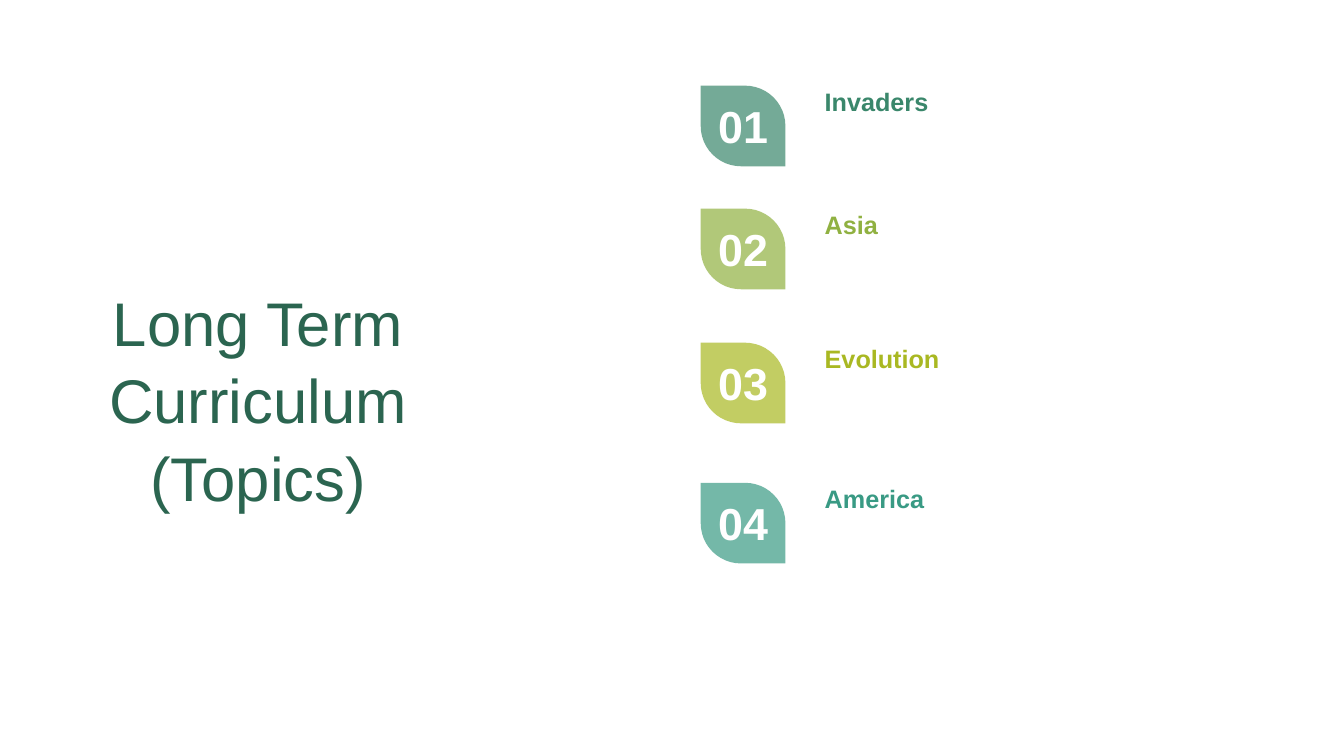
from typing import NamedTuple

from lxml import etree
from pptx import Presentation
from pptx.dml.color import RGBColor
from pptx.enum.shapes import MSO_SHAPE
from pptx.enum.text import MSO_ANCHOR, MSO_AUTO_SIZE, PP_ALIGN
from pptx.oxml.ns import qn
from pptx.util import Inches, Pt

LEAF = MSO_SHAPE.ROUND_2_DIAG_RECTANGLE
CENTER, LEFT = PP_ALIGN.CENTER, PP_ALIGN.LEFT
TOP, MIDDLE = MSO_ANCHOR.TOP, MSO_ANCHOR.MIDDLE
FIT_SHAPE = MSO_AUTO_SIZE.SHAPE_TO_FIT_TEXT

FONT = "Arial"
WHITE = RGBColor(0xFF, 0xFF, 0xFF)
DARK_GREEN = RGBColor(0x2B, 0x65, 0x50)
GREEN = RGBColor(0x3A, 0x87, 0x6B)
LEAF_GREEN = RGBColor(0x90, 0xB1, 0x41)
LIME = RGBColor(0xA9, 0xB8, 0x22)
TEAL = RGBColor(0x39, 0x9A, 0x84)


class Topic(NamedTuple):
    name: str
    top: float
    color: RGBColor


TOPICS = [
    Topic("Invaders", 0.85, GREEN),
    Topic("Asia", 2.07, LEAF_GREEN),
    Topic("Evolution", 3.4, LIME),
    Topic("America", 4.79, TEAL),
]


def set_text(sp, *lines: str, size: float, color: RGBColor, bold: bool = False,
             align=LEFT, anchor=TOP, inset: float = 0.12,
             line_spacing: float = 1.0) -> None:
    """Fill a shape with one paragraph per line."""
    tf = sp.text_frame
    tf.word_wrap = True
    tf.auto_size = FIT_SHAPE
    tf.vertical_anchor = anchor
    tf.margin_left = tf.margin_right = Inches(inset)
    tf.margin_top = tf.margin_bottom = Inches(0.05)
    for i, line in enumerate(lines):
        p = tf.paragraphs[0] if i == 0 else tf.add_paragraph()
        p.alignment = align
        p.line_spacing = line_spacing
        r = p.add_run()
        r.text = line
        r.font.name = FONT
        r.font.size = Pt(size)
        r.font.bold = bold
        r.font.color.rgb = color


def set_opacity(sp, percent: int) -> None:
    """Make the solid fill of a shape partly transparent."""
    color = sp.fill._xPr.find(qn("a:solidFill"))[0]
    etree.SubElement(color, qn("a:alpha")).set("val", str(percent * 1000))


def add_topic(slide, number: int, topic: Topic) -> None:
    """Draw a numbered leaf with its topic name beside it."""
    group = slide.shapes.add_group_shape()

    leaf = group.shapes.add_shape(LEAF, Inches(6.95), Inches(topic.top),
                                  Inches(0.84), Inches(0.8))
    leaf.adjustments[0] = 0
    leaf.adjustments[1] = 0.5
    leaf.shadow.inherit = False
    leaf.fill.solid()
    leaf.fill.fore_color.rgb = topic.color
    set_opacity(leaf, 70)
    leaf.line.fill.background()

    label = group.shapes.add_textbox(Inches(7), Inches(topic.top + 0.08),
                                     Inches(0.74), Inches(0.64))
    set_text(label, f"{number:02d}", size=32, color=WHITE, bold=True, align=CENTER)

    name = group.shapes.add_textbox(Inches(8.06), Inches(topic.top - 0.04),
                                    Inches(4.7), Inches(0.4))
    set_text(name, topic.name, size=18, color=topic.color, bold=True)


def main() -> None:
    prs = Presentation()
    prs.slide_width, prs.slide_height = Inches(13.33), Inches(7.5)
    slide = prs.slides.add_slide(prs.slide_layouts[5])

    # Title
    title = slide.shapes.title
    title.left, title.top = Inches(0.9), Inches(2.78)
    title.width, title.height = Inches(3.32), Inches(2.32)
    set_text(title, "Long Term Curriculum", "(Topics)", size=44, color=DARK_GREEN,
             align=CENTER, anchor=MIDDLE, inset=0.1, line_spacing=1.05)

    # Numbered topics
    for number, topic in enumerate(TOPICS, start=1):
        add_topic(slide, number, topic)

    prs.save("out.pptx")


if __name__ == "__main__":
    main()
